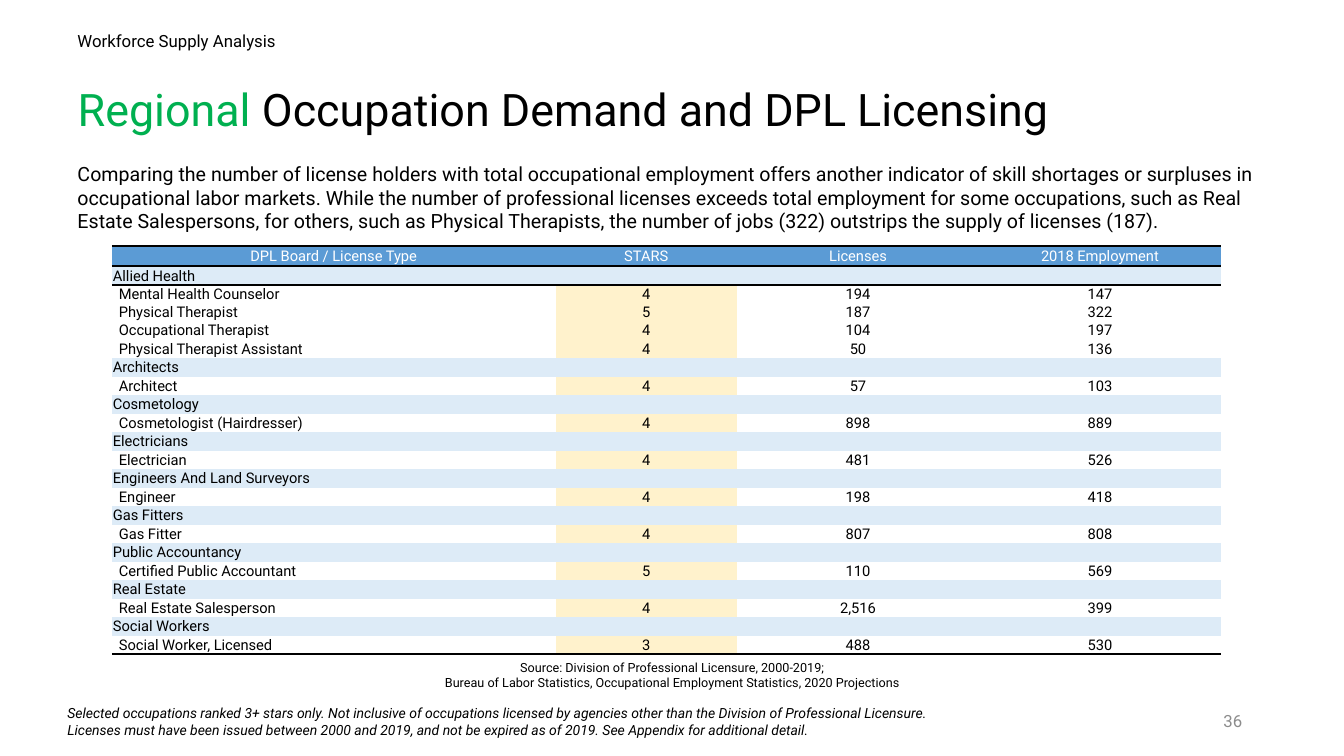
from lxml.etree import SubElement
from pptx import Presentation
from pptx.dml.color import RGBColor
from pptx.enum.text import MSO_ANCHOR as Anchor, PP_ALIGN as Align
from pptx.oxml.ns import qn
from pptx.util import Inches, Pt

BLACK, WHITE, GREEN, GREY = "000000", "FFFFFF", "00B050", "8C8C8C"
HEADER_BLUE, GROUP_BLUE, STARS_YELLOW = "5B9BD5", "DDEBF7", "FFF2CC"
NO_GRID_STYLE = "{2D5ABB26-0587-4C30-8999-92F81FD0307C}"

HEADINGS = ("DPL Board / License Type", "STARS", "Licenses", "2018 Employment")
COLUMN_WIDTHS = (4.4, 1.8, 2.4, 2.4)
BOARDS = {
    "Allied Health": [
        ("Mental Health Counselor", "4", "194", "147"),
        ("Physical Therapist", "5", "187", "322"),
        ("Occupational Therapist", "4", "104", "197"),
        ("Physical Therapist Assistant", "4", "50", "136"),
    ],
    "Architects": [("Architect", "4", "57", "103")],
    "Cosmetology": [("Cosmetologist (Hairdresser)", "4", "898", "889")],
    "Electricians": [("Electrician", "4", "481", "526")],
    "Engineers And Land Surveyors": [("Engineer", "4", "198", "418")],
    "Gas Fitters": [("Gas Fitter", "4", "807", "808")],
    "Public Accountancy": [("Certified Public Accountant", "5", "110", "569")],
    "Real Estate": [("Real Estate Salesperson", "4", "2,516", "399")],
    "Social Workers": [("Social Worker, Licensed", "3", "488", "530")],
}


def color(hex_text):
    return RGBColor.from_string(hex_text)


class SlideBuilder:
    font = "Roboto"
    table_size = 10.5

    def __init__(self, slide):
        self.slide = slide

    def run(self, paragraph, text, size, hex_text=BLACK, italic=False):
        run = paragraph.add_run()
        run.text = text
        run.font.name = self.font
        run.font.size = Pt(size)
        run.font.italic = italic
        run.font.color.rgb = color(hex_text)

    def title(self, box, parts, size):
        """Place the title placeholder and fill it with (text, colour) parts."""
        title = self.slide.shapes.title
        title.left, title.top, title.width, title.height = map(Inches, box)
        title.text_frame.vertical_anchor = Anchor.MIDDLE
        paragraph = title.text_frame.paragraphs[0]
        paragraph.alignment = Align.LEFT
        paragraph.line_spacing = 0.9
        for text, hex_text in parts:
            self.run(paragraph, text, size, hex_text)

    def text(self, box, lines, size, hex_text=BLACK, align=Align.LEFT,
             anchor=Anchor.TOP, italic=False, wrap=True):
        frame = self.slide.shapes.add_textbox(*map(Inches, box)).text_frame
        frame.word_wrap = wrap
        frame.vertical_anchor = anchor
        for index, line in enumerate(lines):
            paragraph = frame.add_paragraph() if index else frame.paragraphs[0]
            paragraph.alignment = align
            self.run(paragraph, line, size, hex_text, italic)

    def border(self, cell, side):
        """Draw a black rule on the cell's T (top) or B (bottom) side."""
        line = SubElement(cell._tc.get_or_add_tcPr(), qn(f"a:ln{side}"), w=str(Pt(1.5)))
        fill = SubElement(line, qn("a:solidFill"))
        SubElement(fill, qn("a:srgbClr"), val=BLACK)

    def cell(self, cell, text, fill, hex_text, align, indent, sides):
        cell.margin_left = Inches(indent)
        cell.margin_top = cell.margin_right = Inches(0.01)
        cell.margin_bottom = 0
        cell.vertical_anchor = Anchor.MIDDLE
        for side in sides:
            self.border(cell, side)
        if fill:
            cell.fill.solid()
            cell.fill.fore_color.rgb = color(fill)
        else:
            cell.fill.background()
        paragraph = cell.text_frame.paragraphs[0]
        paragraph.alignment = align
        if text:
            self.run(paragraph, text, self.table_size, hex_text)
        else:
            SubElement(paragraph._p, qn("a:endParaRPr"), sz=str(int(self.table_size * 100)))

    def license_table(self, left, top, header_height, row_height):
        rows = [("header", HEADINGS)]
        for board, licenses in BOARDS.items():
            rows.append(("board", (board, "", "", "")))
            rows += [("license", values) for values in licenses]
        height = header_height + row_height * (len(rows) - 1)
        table = self.slide.shapes.add_table(
            len(rows), len(HEADINGS), Inches(left), Inches(top),
            Inches(sum(COLUMN_WIDTHS)), Inches(height)).table
        table._tbl.tblPr.find(qn("a:tableStyleId")).text = NO_GRID_STYLE
        table.horz_banding = False
        for column, width in zip(table.columns, COLUMN_WIDTHS):
            column.width = Inches(width)
        row_fills = {"header": HEADER_BLUE, "board": GROUP_BLUE, "license": None}
        for row_index, (kind, values) in enumerate(rows):
            header = kind == "header"
            table.rows[row_index].height = Inches(header_height if header else row_height)
            sides = {0: "TB", 1: "T", len(rows) - 1: "B"}.get(row_index, "")
            for column_index, value in enumerate(values):
                is_license = kind == "license"
                stars = is_license and column_index == 1
                self.cell(
                    table.cell(row_index, column_index), value,
                    fill=STARS_YELLOW if stars else row_fills[kind],
                    hex_text=WHITE if header else BLACK,
                    align=Align.CENTER if header or column_index else Align.LEFT,
                    indent=0.07 if is_license and column_index == 0 else 0.01,
                    sides=sides)


def main():
    presentation = Presentation()
    presentation.slide_width = Inches(13.33)
    presentation.slide_height = Inches(7.5)
    slide = presentation.slides.add_slide(presentation.slide_layouts[5])
    builder = SlideBuilder(slide)

    builder.license_table(1.11, 2.44, header_height=0.2, row_height=0.18)
    builder.text((9.42, 6.95, 3, 0.4), ["36"], 12, GREY, Align.RIGHT, Anchor.MIDDLE)
    builder.title((0.67, 0.67, 12, 0.88),
                  [("Regional ", GREEN), ("Occupation Demand and DPL Licensing", BLACK)], 32)
    builder.text((0.67, 0.26, 2.19, 0.3), ["Workforce Supply Analysis"], 12, wrap=False)
    builder.text((3.08, 6.5, 7.17, 0.4), [
        "Source: Division of Professional Licensure, 2000-2019;",
        "Bureau of Labor Statistics, Occupational Employment Statistics, 2020 Projections",
    ], 9, align=Align.CENTER)
    builder.text((0.57, 6.94, 11.43, 0.44), [
        "Selected occupations ranked 3+ stars only. Not inclusive of occupations licensed "
        "by agencies other than the Division of Professional Licensure.",
        "Licenses must have been issued between 2000 and 2019, and not be expired as of 2019. "
        "See Appendix for additional detail.",
    ], 10, italic=True)
    builder.text((0.67, 1.56, 11.89, 0.81), [
        "Comparing the number of license holders with total occupational employment offers "
        "another indicator of skill shortages or surpluses in occupational labor markets. "
        "While the number of professional licenses exceeds total employment for some "
        "occupations, such as Real Estate Salespersons, for others, such as Physical "
        "Therapists, the number of jobs (322) outstrips the supply of licenses (187).",
    ], 14)
    presentation.save("out.pptx")


if __name__ == "__main__":
    main()
